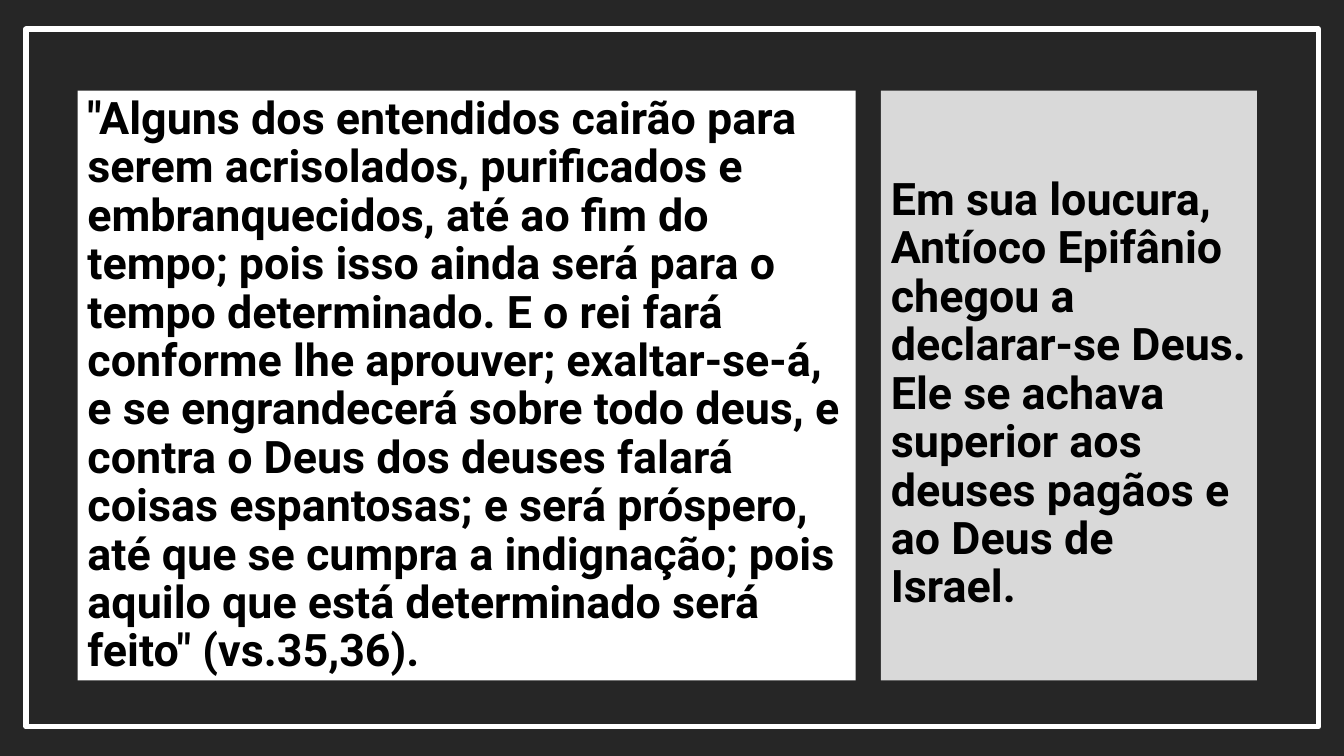
from dataclasses import dataclass

from pptx import Presentation
from pptx.dml.color import RGBColor
from pptx.enum.shapes import MSO_SHAPE
from pptx.enum.text import MSO_ANCHOR, PP_ALIGN
from pptx.util import Pt

RECT = MSO_SHAPE.RECTANGLE
TOP = MSO_ANCHOR.TOP
LEFT = PP_ALIGN.LEFT


@dataclass(frozen=True)
class Theme:
    dark: str = "262626"
    white: str = "FFFFFF"
    grey: str = "D9D9D9"
    ink: str = "000000"
    font: str = "Roboto"
    size: float = 32
    edge: float = 4
    pitch: float = 0.9


@dataclass(frozen=True)
class Panel:
    left: float
    top: float
    width: float
    height: float
    fill: str = ""
    line: str = ""
    text: str = ""
    inset: float = 3.6


THEME = Theme()
WIDE, HIGH = 960, 540
ROW, TALL = 64.8, 421.2

VERSE = (
    '"Alguns dos entendidos cairão para serem acrisolados, purificados e '
    "embranquecidos, até ao fim do tempo; pois isso ainda será para o tempo "
    "determinado. E o rei fará conforme lhe aprouver; exaltar-se-á, e se "
    "engrandecerá sobre todo deus, e contra o Deus dos deuses falará coisas "
    "espantosas; e será próspero, até que se cumpra a indignação; pois aquilo "
    'que está determinado será feito" (vs.35,36).'
)
NOTE = (
    "Em sua loucura, Antíoco Epifânio chegou a declarar-se Deus. Ele se "
    "achava superior aos deuses pagãos e ao Deus de Israel."
)

PANELS = [
    Panel(0, 0, WIDE, HIGH, fill=THEME.dark),
    Panel(18.7, 20.9, 923, 498.2, line=THEME.white),
    Panel(55.4, ROW, 555.8, TALL, fill=THEME.white, text=VERSE),
    Panel(629.3, ROW, 268.6, TALL, fill=THEME.grey, text=NOTE, inset=61.5),
]


def write(shape, panel: Panel) -> None:
    frame = shape.text_frame
    frame.word_wrap = True
    frame.vertical_anchor = TOP
    frame.margin_top = Pt(panel.inset)
    para = frame.paragraphs[0]
    para.alignment = LEFT
    para.line_spacing = THEME.pitch
    run = para.add_run()
    run.text = panel.text
    run.font.name = THEME.font
    run.font.size = Pt(THEME.size)
    run.font.bold = True
    run.font.color.rgb = RGBColor.from_string(THEME.ink)


def draw(slide, panel: Panel) -> None:
    shape = slide.shapes.add_shape(
        RECT, Pt(panel.left), Pt(panel.top), Pt(panel.width), Pt(panel.height)
    )
    shape.shadow.inherit = False
    if panel.fill:
        shape.fill.solid()
        shape.fill.fore_color.rgb = RGBColor.from_string(panel.fill)
    else:
        shape.fill.background()
    if panel.line:
        shape.line.color.rgb = RGBColor.from_string(panel.line)
        shape.line.width = Pt(THEME.edge)
    else:
        shape.line.fill.background()
    if panel.text:
        write(shape, panel)


def main() -> None:
    deck = Presentation()
    deck.slide_width, deck.slide_height = Pt(WIDE), Pt(HIGH)
    slide = deck.slides.add_slide(deck.slide_layouts[6])
    for panel in PANELS:
        draw(slide, panel)
    deck.save("out.pptx")


if __name__ == "__main__":
    main()
